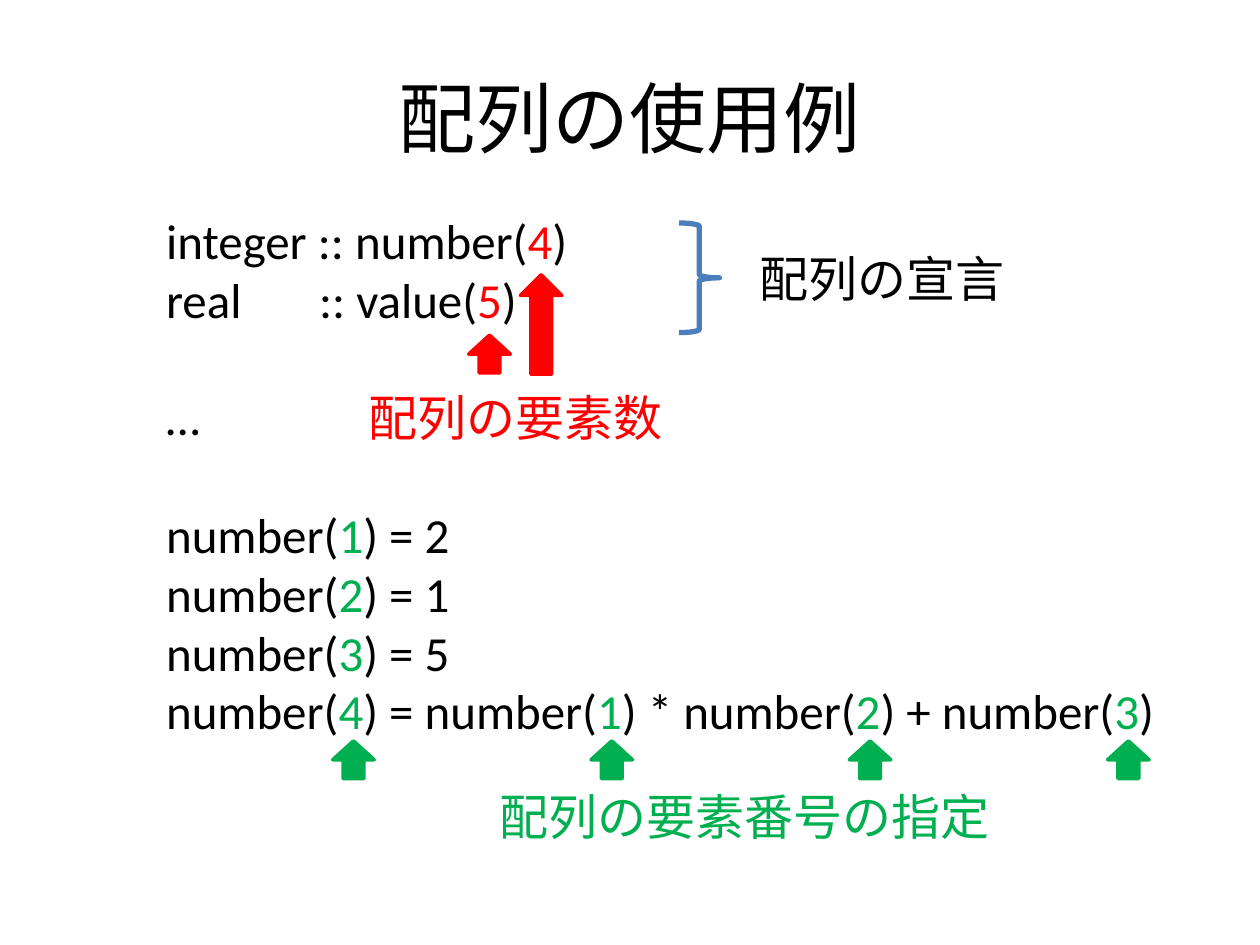
from itertools import cycle

from pptx import Presentation
from pptx.dml.color import RGBColor
from pptx.enum.shapes import MSO_SHAPE
from pptx.enum.text import MSO_ANCHOR, MSO_AUTO_SIZE, PP_ALIGN
from pptx.util import Pt

PX = 9144
COLORS = {"text": "000000", "size": "FF0000", "index": "00B050", "brace": "4B7EBC"}
FONT = {"name": "Calibri", "size": Pt(28)}
BLANK_LINE = Pt(33.6)
CODE = [
    ("integer :: number(|4|)", "size", 0),
    ("real       :: value(|5|)", "size", 0),
    ("…", "size", BLANK_LINE),
    ("number(|1|) = 2", "index", BLANK_LINE),
    ("number(|2|) = 1", "index", 0),
    ("number(|3|) = 5", "index", 0),
    ("number(|4|) = number(|1|) * number(|2|) + number(|3|)", "index", 0),
]


def rgb(color):
    return RGBColor.from_string(COLORS[color])


def place(sp, box):
    for name, value in zip(("left", "top", "width", "height"), box):
        setattr(sp, name, value * PX)


def add_run(p, text, color, **extra):
    r = p.add_run()
    r.text = text
    for name, value in {**FONT, **extra}.items():
        setattr(r.font, name, value)
    r.font.color.rgb = rgb(color)


def set_title(s, text, box):
    sp = s.shapes.title
    place(sp, box)
    tf = sp.text_frame
    tf.vertical_anchor = MSO_ANCHOR.MIDDLE
    p = tf.paragraphs[0]
    p.alignment = PP_ALIGN.CENTER
    add_run(p, text, "text", size=Pt(44))


def add_box(s, box):
    tf = s.shapes.add_textbox(*(v * PX for v in box)).text_frame
    tf.word_wrap = False
    tf.auto_size = MSO_AUTO_SIZE.SHAPE_TO_FIT_TEXT
    return tf


def add_label(s, text, color, box):
    add_run(add_box(s, box).paragraphs[0], text, color)


def add_code(s, lines, box):
    tf = add_box(s, box)
    for i, (line, accent, gap) in enumerate(lines):
        p = tf.add_paragraph() if i else tf.paragraphs[0]
        if gap:
            p.space_before = gap
        for text, color in zip(line.split("|"), cycle(("text", accent))):
            add_run(p, text, color)


def add_shape(s, kind, color, weight, box):
    sp = s.shapes.add_shape(kind, *(v * PX for v in box))
    sp.shadow.inherit = False
    sp.line.color.rgb = rgb(color)
    sp.line.width = Pt(weight)
    return sp


def add_arrow(s, color, left, top, height):
    sp = add_shape(s, MSO_SHAPE.DOWN_ARROW, color, 2, (left, top, 33, height))
    sp.rotation = 180
    sp.fill.solid()
    sp.fill.fore_color.rgb = rgb(color)


def add_brace(s, box):
    add_shape(s, MSO_SHAPE.RIGHT_BRACE, "brace", 3, box).fill.background()


def main():
    prs = Presentation()
    prs.slide_width, prs.slide_height = 1000 * PX, 750 * PX
    s = prs.slides.add_slide(prs.slide_layouts[5])
    set_title(s, "配列の使用例", (50, 30, 900, 125))
    add_code(s, CODE, (122, 162, 814, 434))
    add_label(s, "配列の宣言", "text", (593, 192, 217, 57))
    add_arrow(s, "size", 413, 218, 79)
    add_arrow(s, "size", 372, 266, 30)
    add_label(s, "配列の要素数", "size", (283, 303, 256, 57))
    add_label(s, "配列の要素番号の指定", "index", (387, 619, 413, 57))
    for i in range(4):
        add_arrow(s, "index", 264 + 205 * i, 588, 30)
    add_brace(s, (539, 177, 32, 87))
    prs.save("out.pptx")


if __name__ == "__main__":
    main()
